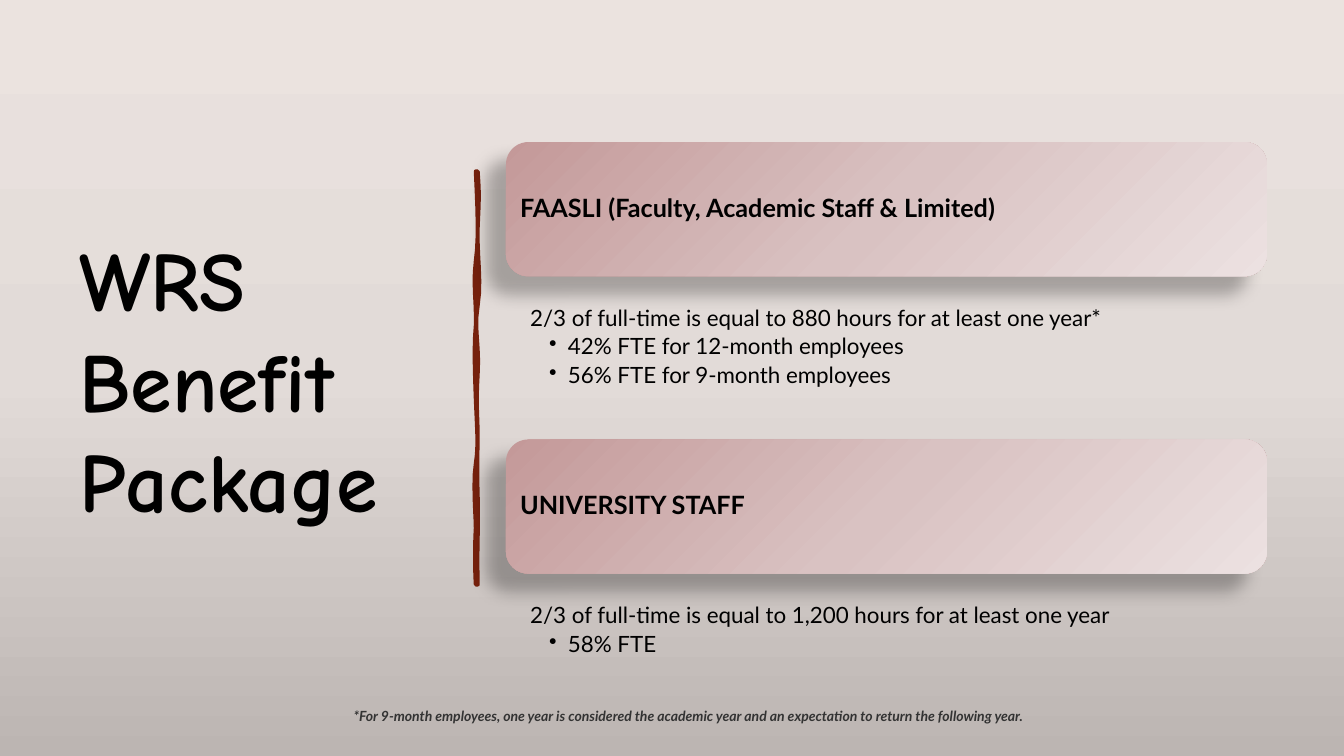
from lxml import etree
from pptx import Presentation
from pptx.dml.color import RGBColor
from pptx.enum.shapes import MSO_SHAPE
from pptx.enum.text import MSO_ANCHOR, MSO_AUTO_SIZE, PP_ALIGN
from pptx.oxml.ns import qn
from pptx.util import Pt

ROUNDED = MSO_SHAPE.ROUNDED_RECTANGLE
TOP, MIDDLE = MSO_ANCHOR.TOP, MSO_ANCHOR.MIDDLE
LEFT = PP_ALIGN.LEFT
FIT_SHAPE = MSO_AUTO_SIZE.SHAPE_TO_FIT_TEXT

BLACK = RGBColor(0x00, 0x00, 0x00)
GRAY = RGBColor(0x33, 0x33, 0x33)
RUST = RGBColor(0x76, 0x21, 0x0D)
PAGE_COLORS = (RGBColor(0xEB, 0xE3, 0xDF), RGBColor(0xE2, 0xDB, 0xD8), RGBColor(0xBC, 0xB5, 0xB2))
CARD_COLORS = (RGBColor(0xC4, 0x99, 0x99), RGBColor(0xD9, 0xC2, 0xC2), RGBColor(0xEC, 0xE1, 0xE1))

# Divider edges: start x, then (control offset, y, control offset, y, end y)
DIVIDER_TOP = 122.4
RIGHT_EDGE = (341.3, [
    (1.4, 140.4, 0.7, 144.7, 162.7), (-0.7, 181.4, 2.9, 201.6, 218.2),
    (-2.9, 234.7, 1.4, 247.7, 267.1), (-1.4, 287.3, 0, 300.2, 310.3),
    (0, 321.1, -0.7, 333.4, 354.2), (0.7, 374.4, -0.7, 391.7, 417.6)])
LEFT_EDGE = (339.8, [
    (-0.7, 409, -0.7, 386, 377.3), (0, 369.4, -2.2, 344.2, 331.2),
    (2.2, 318.2, 0.7, 304.6, 285.1), (-0.7, 265.7, -1.4, 247, 232.6),
    (0.7, 218.9, -2.2, 202.3, 186.5), (2.2, 170.6, 1.4, 151.9, DIVIDER_TOP)])

SECTIONS = [
    ("FAASLI (Faculty, Academic Staff & Limited)",
     "2/3 of full-time is equal to 880 hours for at least one year*",
     ["42% FTE for 12-month employees", "56% FTE for 9-month employees"], 116.6),
    ("UNIVERSITY STAFF",
     "2/3 of full-time is equal to 1,200 hours for at least one year",
     ["58% FTE"], 85),
]


def trace_edge(edge, start_y, steps=6):
    """Points along a hand-drawn edge made of cubic curves."""
    x, curves = edge
    points = [(Pt(x), Pt(start_y))]
    for offset1, y1, offset2, y2, end_y in curves:
        for step in range(1, steps + 1):
            t = step / steps
            a, b, c, d = (1 - t) ** 3, 3 * t * (1 - t) ** 2, 3 * t * t * (1 - t), t ** 3
            points.append((Pt(x + b * offset1 + c * offset2),
                           Pt(a * start_y + b * y1 + c * y2 + d * end_y)))
        start_y = end_y
    return points


class SlideBuilder:
    body_font = "Lato"
    title_font = "Comic Neue"

    def __init__(self, slide):
        self.slide = slide

    def gradient(self, fill, owner, colors, angle):
        fill.gradient()
        fill.gradient_angle = 360 - angle
        stops = owner.find(".//" + qn("a:gsLst"))
        for stop in list(stops):
            stops.remove(stop)
        for position, color in zip((0, 50000, 100000), colors):
            stop = etree.SubElement(stops, qn("a:gs"), pos=str(position))
            etree.SubElement(stop, qn("a:srgbClr"), val=str(color))

    def background(self):
        self.gradient(self.slide.background.fill, self.slide.element, PAGE_COLORS, 90)

    def frame(self, shape, insets, anchor):
        frame = shape.text_frame
        frame.word_wrap = True
        frame.vertical_anchor = anchor
        frame.margin_left, frame.margin_top, frame.margin_right, frame.margin_bottom = map(Pt, insets)
        return frame

    def text_box(self, left, top, width, height, insets=(7.2, 3.6, 7.2, 3.6), anchor=TOP):
        box = self.slide.shapes.add_textbox(Pt(left), Pt(top), Pt(width), Pt(height))
        return self.frame(box, insets, anchor)

    def add_text(self, paragraph, text, size, color=BLACK, font=body_font, bold=False, italic=False):
        paragraph.alignment = LEFT
        run = paragraph.add_run()
        run.text = text
        run.font.name, run.font.size = font, Pt(size)
        run.font.bold, run.font.italic = bold, italic
        run.font.color.rgb = color

    def divider(self):
        points = trace_edge(RIGHT_EDGE, DIVIDER_TOP) + trace_edge(LEFT_EDGE, RIGHT_EDGE[1][-1][-1])
        builder = self.slide.shapes.build_freeform(*points[0])
        builder.add_line_segments(points[1:], close=True)
        shape = builder.convert_to_shape()
        shape.shadow.inherit = False
        shape.fill.solid()
        shape.fill.fore_color.rgb = RUST
        shape.line.color.rgb = RUST
        shape.line.width = Pt(2.75)

    def card(self, left, top, width, height, heading):
        shape = self.slide.shapes.add_shape(ROUNDED, Pt(left), Pt(top), Pt(width), Pt(height))
        self.gradient(shape.fill, shape.element, CARD_COLORS, 45)
        shape.line.fill.background()
        shape.shadow.inherit = False
        effects = shape.element.spPr.find(qn("a:effectLst"))
        shadow = etree.SubElement(effects, qn("a:outerShdw"), blurRad=str(Pt(11.8)),
                                  dist=str(Pt(19.7)), dir=str(141 * 60000), rotWithShape="0")
        color = etree.SubElement(shadow, qn("a:srgbClr"), val=str(BLACK))
        etree.SubElement(color, qn("a:alpha"), val="28000")
        paragraph = self.frame(shape, (5.5, 5, 5, 5), MIDDLE).paragraphs[0]
        paragraph.line_spacing = 0.9
        self.add_text(paragraph, heading, 18, bold=True)

    def details(self, left, top, width, height, rule, bullets):
        frame = self.text_box(left, top, width, height, (17.3, 22, 8.6, 1.4))
        for index, text in enumerate([rule] + bullets):
            paragraph = frame.add_paragraph() if index else frame.paragraphs[0]
            paragraph.line_spacing = 0.9
            paragraph.space_after = Pt(3.2)
            self.add_text(paragraph, text, 16)
            if index:
                paragraph.level = 1
                properties = paragraph._p.get_or_add_pPr()
                properties.set("marL", str(Pt(27)))
                properties.set("indent", str(Pt(-13.5)))
                etree.SubElement(properties, qn("a:buChar"), char="•")


def main():
    presentation = Presentation()
    presentation.slide_width, presentation.slide_height = Pt(960), Pt(540)
    builder = SlideBuilder(presentation.slides.add_slide(presentation.slide_layouts[6]))
    builder.background()

    # Title and divider
    title = builder.text_box(49.7, 50.4, 269.3, 439.9, anchor=MIDDLE)
    builder.add_text(title.paragraphs[0], "WRS Benefit Package", 60, font=builder.title_font, bold=True)
    builder.divider()

    # Staff groups
    left, width, card_height = 361.4, 543.6, 95.8
    top = 101.5
    for heading, rule, bullets, details_height in SECTIONS:
        builder.card(left, top, width, card_height, heading)
        top += card_height
        builder.details(left, top, width, details_height, rule, bullets)
        top += details_height

    # Footnote
    footnote = builder.text_box(245.5, 501.8, 564.5, 19.4)
    footnote.auto_size = FIT_SHAPE
    builder.add_text(footnote.paragraphs[0],
                     "*For 9-month employees, one year is considered the academic year "
                     "and an expectation to return the following year.",
                     10, GRAY, bold=True, italic=True)

    presentation.save("out.pptx")


if __name__ == "__main__":
    main()
